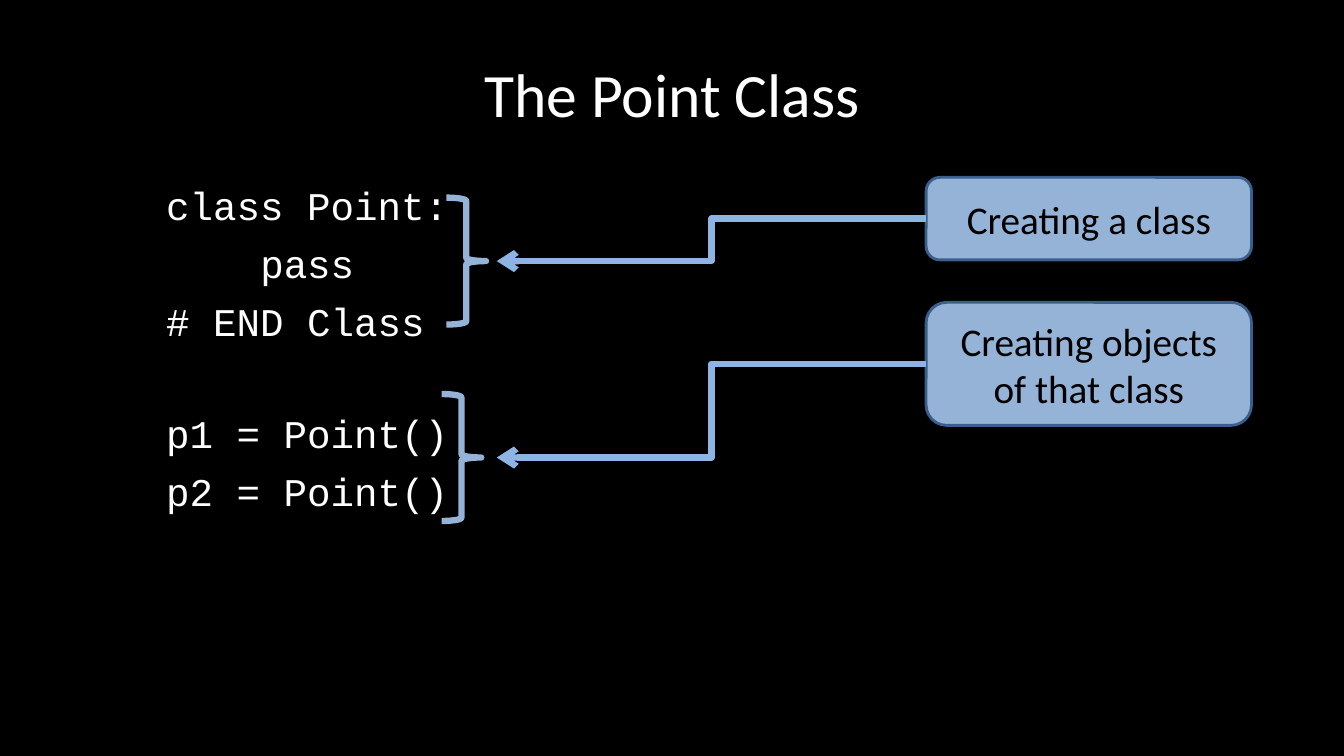
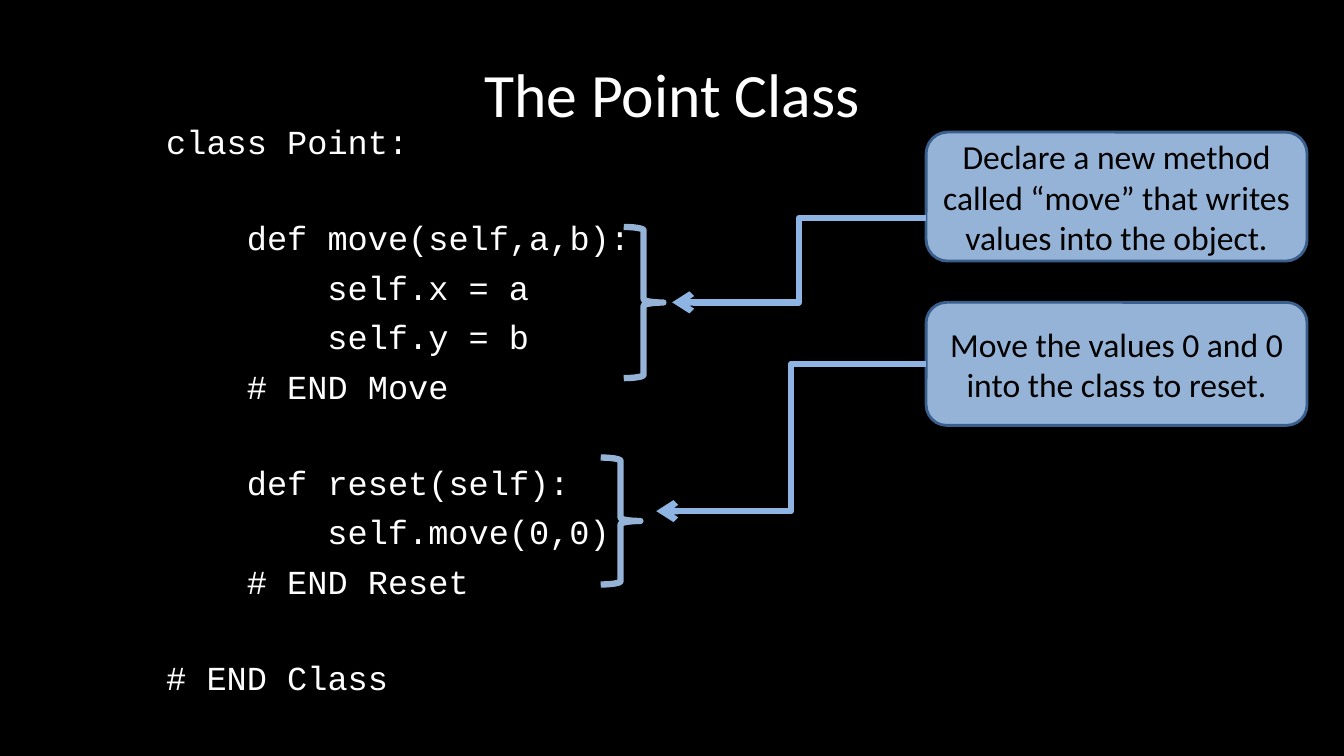
from lxml import etree
from pptx import Presentation
from pptx import util as u
from pptx.dml.color import RGBColor
from pptx.enum import shapes, text
from pptx.oxml import ns

BLACK = RGBColor(0x00, 0x00, 0x00)
WHITE = RGBColor(0xFF, 0xFF, 0xFF)
PALE_BLUE = RGBColor(0x95, 0xB3, 0xD7)
DARK_BLUE = RGBColor(0x3A, 0x5F, 0x8C)
ARROW_BLUE = RGBColor(0x8E, 0xB4, 0xE3)

BODY_FONT = "Calibri"
CODE_FONT = "Courier New"
CHAR_WIDTH = 0.6     # fixed character width, share of the font size
LINE_HEIGHT = 1.13   # code line height, share of the font size
LINE_GAP = 0.27      # space above a code line, share of the font size

CALLOUT_LEFT = 23.34


def write(paragraph, words, *, size, font=BODY_FONT, color=WHITE,
          align=text.PP_ALIGN.CENTER, before=0, indent=0):
    """Fill one paragraph; size, before and indent are points."""
    paragraph.alignment = align
    paragraph.space_before = u.Pt(before)
    if indent:
        properties = paragraph._p.get_or_add_pPr()
        properties.set("marL", str(u.Pt(indent)))
        properties.set("indent", "0")
    run = paragraph.add_run()
    run.text = words
    run.font.name = font
    run.font.size = u.Pt(size)
    run.font.color.rgb = color


class Deck:
    """Holds the shared style and the current slide."""

    def __init__(self):
        self.prs = Presentation()
        self.prs.slide_width = u.Cm(33.87)
        self.prs.slide_height = u.Cm(19.05)
        backdrop = self.prs.slide_master.background.fill
        backdrop.solid()
        backdrop.fore_color.rgb = BLACK
        self.slide = None

    def new_slide(self, title):
        self.slide = self.prs.slides.add_slide(self.prs.slide_layouts[6])
        frame = self.text_frame(1.7, 0.76, 30.48, 3.18)
        frame.vertical_anchor = text.MSO_ANCHOR.MIDDLE
        write(frame.paragraphs[0], title, size=44)

    def text_frame(self, left, top, width, height):
        box = self.slide.shapes.add_textbox(
            u.Cm(left), u.Cm(top), u.Cm(width), u.Cm(height))
        box.text_frame.word_wrap = True
        return box.text_frame

    def code(self, top, height, size, lines):
        """Leading spaces become indents, empty lines become spacing."""
        frame = self.text_frame(3.94, top, 27.6, height)
        paragraph = frame.paragraphs[0]
        before = LINE_GAP * size
        for line in lines:
            if not line:
                before += (LINE_HEIGHT + LINE_GAP) * size
                continue
            words = line.lstrip()
            depth = len(line) - len(words)
            write(paragraph or frame.add_paragraph(), words, size=size,
                  font=CODE_FONT, align=text.PP_ALIGN.LEFT, before=before,
                  indent=depth * CHAR_WIDTH * size)
            paragraph = None
            before = LINE_GAP * size

    def preset(self, kind, left, top, width, height, line, weight):
        shape = self.slide.shapes.add_shape(
            kind, u.Cm(left), u.Cm(top), u.Cm(width), u.Cm(height))
        shape.shadow.inherit = False
        shape.line.color.rgb = line
        shape.line.width = u.Pt(weight)
        return shape

    def callout(self, words, top, width, height, size):
        callout = self.preset(shapes.MSO_SHAPE.ROUNDED_RECTANGLE,
                              CALLOUT_LEFT, top, width, height, DARK_BLUE, 2)
        callout.fill.solid()
        callout.fill.fore_color.rgb = PALE_BLUE
        frame = callout.text_frame
        frame.word_wrap = True
        frame.vertical_anchor = text.MSO_ANCHOR.MIDDLE
        write(frame.paragraphs[0], words, size=size, color=BLACK)
        return callout

    def brace(self, left, top, height):
        brace = self.preset(shapes.MSO_SHAPE.RIGHT_BRACE,
                            left, top, 1, height, PALE_BLUE, 4.5)
        brace.fill.background()

    def arrow(self, callout, tip, start=None):
        """Lead from the callout's left side, or from height start on it."""
        x, y = tip
        arrow = self.slide.shapes.add_connector(
            shapes.MSO_CONNECTOR.ELBOW, u.Cm(CALLOUT_LEFT), u.Cm(start or y),
            u.Cm(x), u.Cm(y))
        if start is None:
            arrow.begin_connect(callout, 1)
        arrow.line.color.rgb = ARROW_BLUE
        arrow.line.width = u.Pt(4.5)
        etree.SubElement(arrow.line._get_or_add_ln(), ns.qn("a:tailEnd"),
                         type="arrow")
        etree.SubElement(arrow._element.spPr, ns.qn("a:effectLst"))


def main():
    deck = Deck()

    # Empty class and its objects
    deck.new_slide("The Point Class")
    deck.code(4.45, 12.57, 28, [
        "class Point:",
        "    pass",
        "# END Class",
        "",
        "p1 = Point()",
        "p2 = Point()",
    ])
    creating_class = deck.callout("Creating a class", 4.47, 8.2, 2.08, 28)
    deck.arrow(creating_class, (12.52, 6.58))
    creating_objects = deck.callout("Creating objects of that class",
                                    7.62, 8.2, 3.1, 28)
    deck.arrow(creating_objects, (12.52, 11.53))
    deck.brace(11.13, 9.93, 3.2)
    deck.brace(11.25, 4.98, 3.2)

    # Class with methods
    deck.new_slide("The Point Class")
    deck.code(2.92, 14, 24, [
        "class Point:",
        "",
        "    def move(self,a,b):",
        "        self.x = a",
        "        self.y = b",
        "    # END Move",
        "",
        "    def reset(self):",
        "        self.move(0,0)",
        "    # END Reset",
        "",
        "# END Class",
    ])
    move_method = deck.callout(
        "Declare a new method called “move” that writes values into the object.",
        3.33, 9.6, 3.25, 24)
    deck.arrow(move_method, (16.94, 7.62), start=5.49)
    reset_method = deck.callout(
        "Move the values 0 and 0 into the class to reset.", 7.62, 9.6, 3.1, 24)
    deck.arrow(reset_method, (16.54, 12.88))
    deck.brace(15.14, 11.53, 3.2)
    deck.brace(15.72, 5.72, 3.81)

    deck.prs.save("out.pptx")


if __name__ == "__main__":
    main()
